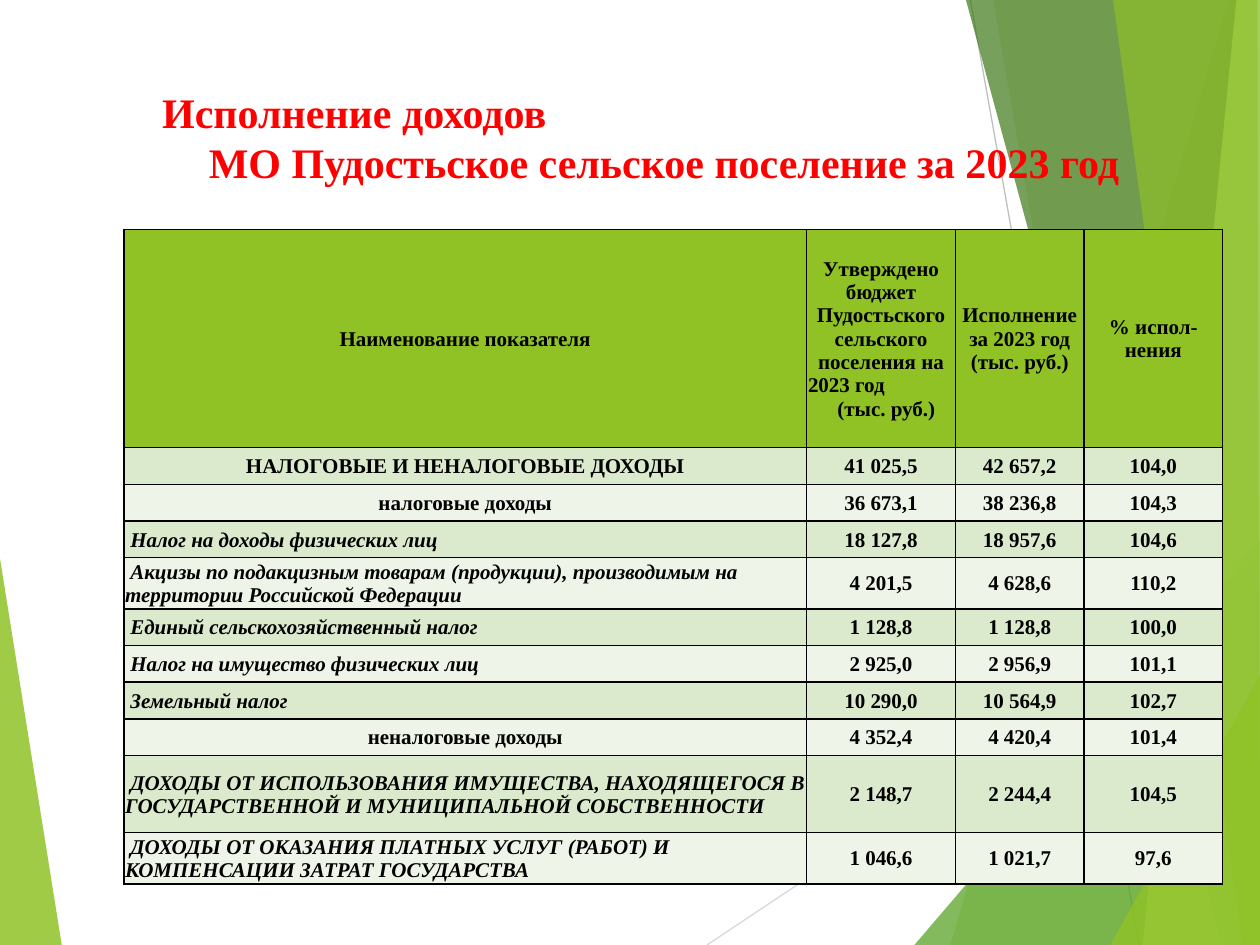
from typing import NamedTuple

from lxml import etree
from pptx import Presentation
from pptx import util as u
from pptx.dml.color import RGBColor
from pptx.enum import text
from pptx.enum.shapes import MSO_CONNECTOR
from pptx.oxml.ns import qn

FACE = "Times New Roman"
INK = {
    "lime": "90C226", "green": "54A021", "forest": "3F7819", "pale": "C0E474",
    "mist": "D9D9D9", "gray": "BFBFBF", "red": "FF0000", "black": "000000",
    "odd": "DBE9CD", "even": "EEF4E8",
}
MID, LEFT = text.PP_ALIGN.CENTER, text.PP_ALIGN.LEFT


class Facet(NamedTuple):
    ink: str
    alpha: int  # opacity, percent
    pts: list


class Ray(NamedTuple):
    ink: str
    ends: tuple


class Row(NamedTuple):
    name: str
    plan: str
    fact: str
    rate: str
    high: float = 21
    head: bool = False  # group rows are centred and upright


LEAF = Facet("lime", 85, [(-0.5, 316), (35.3, 540), (-0.5, 540)])
RAYS = [
    Ray("mist", (404, 540, 720.5, 329)),
    Ray("gray", (554.5, 0, 651, 540)),
]
FACETS = [
    Facet("lime", 30, [(702, 0), (543, 540), (721, 540), (721, 0)]),
    Facet("lime", 20, [(567.5, 0), (661.5, 540), (720.5, 540), (720.5, 0)]),
    Facet("green", 72, [(522.5, 540), (720, 309), (720.5, 540)]),
    Facet("forest", 70, [(552, 0), (698.5, 540), (720.5, 540), (720.5, 0)]),
    Facet("pale", 70, [(706.5, 0), (653, 540), (720.5, 540), (720, 0)]),
    Facet("lime", 65, [(636, 0), (710, 540), (720, 540), (718.5, 0)]),
    Facet("lime", 80, [(634.5, 540), (720.5, 385), (720.5, 540)]),
]
TITLE = [("Исполнение доходов", LEFT, 15),
         ("МО Пудостьское сельское поселение за 2023 год", MID, 0)]
WIDE = [390.25, 85, 73.5, 79.25]
HIGH = 124.5
HEADS = [
    [("Наименование показателя", MID, 0)],
    [("Утверждено бюджет Пудостьского сельского поселения на", MID, 0),
     ("2023 год", LEFT, 0), ("(тыс. руб.)", MID, 6)],
    [("Исполнение за 2023 год (тыс. руб.)", MID, 0)],
    [("% испол-нения", MID, 0)],
]
ROWS = [
    Row("НАЛОГОВЫЕ И НЕНАЛОГОВЫЕ ДОХОДЫ", "41 025,5", "42 657,2", "104,0", head=True),
    Row("налоговые доходы", "36 673,1", "38 236,8", "104,3", head=True),
    Row("Налог на доходы физических лиц", "18 127,8", "18 957,6", "104,6"),
    Row("Акцизы по подакцизным товарам (продукции), производимым на "
        "территории Российской Федерации", "4 201,5", "4 628,6", "110,2", 29.25),
    Row("Единый сельскохозяйственный налог", "1 128,8", "1 128,8", "100,0"),
    Row("Налог на имущество физических лиц", "2 925,0", "2 956,9", "101,1"),
    Row("Земельный налог", "10 290,0", "10 564,9", "102,7"),
    Row("неналоговые доходы", "4 352,4", "4 420,4", "101,4", head=True),
    Row("ДОХОДЫ ОТ ИСПОЛЬЗОВАНИЯ ИМУЩЕСТВА, НАХОДЯЩЕГОСЯ В ГОСУДАРСТВЕННОЙ "
        "И МУНИЦИПАЛЬНОЙ СОБСТВЕННОСТИ", "2 148,7", "2 244,4", "104,5", 44),
    Row("ДОХОДЫ ОТ ОКАЗАНИЯ ПЛАТНЫХ УСЛУГ (РАБОТ) И КОМПЕНСАЦИИ ЗАТРАТ "
        "ГОСУДАРСТВА", "1 046,6", "1 021,7", "97,6", 29.25),
]


def rgb(ink: str) -> RGBColor:
    return RGBColor.from_string(INK[ink])


def sub(node, tag: str, **attrs):
    return etree.SubElement(node, qn(tag), **attrs)


def draw_facet(shapes, facet: Facet) -> None:
    pts = [(u.Pt(x), u.Pt(y)) for x, y in facet.pts]
    form = shapes.build_freeform(*pts[0])
    form.add_line_segments(pts[1:], close=True)
    shape = form.convert_to_shape()
    shape.shadow.inherit = False
    shape.line.fill.background()
    shape.fill.solid()
    shape.fill.fore_color.rgb = rgb(facet.ink)
    tint = next(shape.element.iter(qn("a:srgbClr")))
    sub(tint, "a:alpha", val=str(facet.alpha * 1000))


def draw_ray(shapes, ray: Ray) -> None:
    line = shapes.add_connector(MSO_CONNECTOR.STRAIGHT, *map(u.Pt, ray.ends))
    line.line.color.rgb = rgb(ray.ink)
    line.line.width = u.Pt(0.75)
    sub(line.element.spPr, "a:effectLst")


def write(frame, paras: list, size: float, ink: str, italic: bool = False) -> None:
    """Fill a frame with (words, alignment, first-line indent) paragraphs."""
    style = {"name": FACE, "size": u.Pt(size), "bold": True, "italic": italic}
    for i, (words, align, indent) in enumerate(paras):
        para = frame.paragraphs[0] if i == 0 else frame.add_paragraph()
        para.alignment = align
        if indent:
            para._p.get_or_add_pPr().set("indent", str(u.Pt(indent)))
        font = para.add_run().font
        para.runs[0].text = words
        for key, value in style.items():
            setattr(font, key, value)
        font.color.rgb = rgb(ink)


def draw_cell(cell, paras: list, ink: str, italic: bool = False) -> None:
    form = {"margin_left": u.Pt(0.75), "margin_right": u.Pt(0.75),
            "margin_top": u.Pt(0.75), "margin_bottom": 0,
            "vertical_anchor": text.MSO_ANCHOR.MIDDLE}
    for key, value in form.items():
        setattr(cell, key, value)
    props = cell._tc.get_or_add_tcPr()
    for side in "LRTB":
        edge = sub(props, f"a:ln{side}", w=str(u.Pt(1)))
        sub(sub(edge, "a:solidFill"), "a:srgbClr", val=INK["black"])
    cell.fill.solid()
    cell.fill.fore_color.rgb = rgb(ink)
    write(cell.text_frame, paras, 12, "black", italic)


def draw_title(title) -> None:
    box = {"left": 70.5, "top": 31.5, "width": 618, "height": 79}
    for key, value in box.items():
        setattr(title, key, u.Pt(value))
    frame = title.text_frame
    form = {"vertical_anchor": text.MSO_ANCHOR.BOTTOM, "word_wrap": True,
            "auto_size": text.MSO_AUTO_SIZE.NONE}
    for key, value in form.items():
        setattr(frame, key, value)
    write(frame, TITLE, 24, "red")
    title.element.getparent().append(title.element)  # bring above the facets


def draw_table(shapes) -> None:
    highs = [HIGH] + [row.high for row in ROWS]
    box = map(u.Pt, (70.75, 131.25, sum(WIDE), sum(highs)))
    table = shapes.add_table(len(highs), len(WIDE), *box).table
    table.first_row = table.horz_banding = False
    for col, wide in zip(table.columns, WIDE):
        col.width = u.Pt(wide)
    for line, high in zip(table.rows, highs):
        line.height = u.Pt(high)
    for c, paras in enumerate(HEADS):
        draw_cell(table.cell(0, c), paras, "lime")
    for r, row in enumerate(ROWS, 1):
        ink = "odd" if r % 2 else "even"
        name = (row.name, MID, 0) if row.head else (row.name, LEFT, 3)
        draw_cell(table.cell(r, 0), [name], ink, not row.head)
        for c, value in enumerate((row.plan, row.fact, row.rate), 1):
            draw_cell(table.cell(r, c), [(value, MID, 0)], ink)


def main() -> None:
    deck = Presentation()
    deck.slide_width, deck.slide_height = u.Pt(720), u.Pt(540)
    slide = deck.slides.add_slide(deck.slide_layouts[5])
    shapes = slide.shapes
    # Backdrop
    draw_facet(shapes, LEAF)
    for ray in RAYS:
        draw_ray(shapes, ray)
    for facet in FACETS:
        draw_facet(shapes, facet)
    # Title and income table
    draw_title(shapes.title)
    draw_table(shapes)
    deck.save("out.pptx")


if __name__ == "__main__":
    main()
